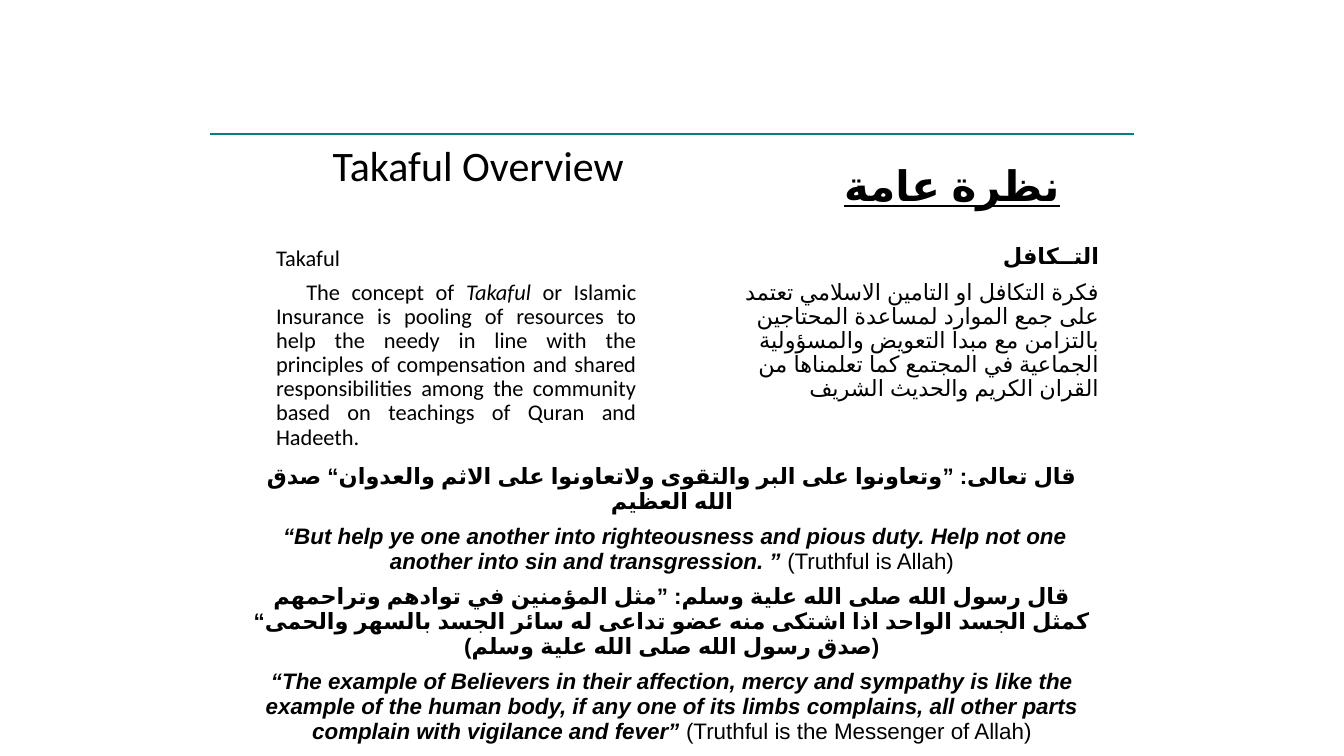
from dataclasses import dataclass

from lxml import etree
from pptx import Presentation
from pptx.dml.color import RGBColor
from pptx.enum import lang, shapes, text
from pptx.oxml.ns import qn
from pptx.text.text import TextFrame
from pptx.util import Inches, Pt

COLORS = {"text": "000000", "rule": "008080"}
ALIGN = text.PP_ALIGN


@dataclass(frozen=True)
class Span:
    words: str
    bold: bool = False
    italic: bool = False
    underline: bool = False


@dataclass(frozen=True)
class Para:
    spans: tuple[Span, ...]
    align: ALIGN = ALIGN.CENTER
    size: float = 16
    font: str = "Arial"
    before: float = 0
    leading: float = 1.0
    arabic: bool = False
    rtl: bool = False
    margin: float = 0
    indent: float = 0


@dataclass(frozen=True)
class Block:
    left: float
    top: float
    width: float
    height: float
    paras: tuple[Para, ...] = ()


def quote(words: str, source: str) -> tuple[Span, ...]:
    """Bold italic translation followed by its plain attribution."""
    return Span(words + " ", bold=True, italic=True), Span(source)


BLOCKS = (
    Block(2.33, 1.34, 4.83, 0.83, (
        Para((Span("Takaful Overview"),), size=30, font="Calibri"),)),
    Block(7.88, 1.53, 3.12, 0.61, (
        Para((Span("نظرة عامة", bold=True, underline=True),), size=30, arabic=True),)),
    Block(2.26, 2.4, 4.15, 2.14, (
        Para((Span("Takaful"),), ALIGN.LEFT, font="Calibri", leading=0.9, margin=0.38),
        Para((Span("The concept of "), Span("Takaful", italic=True),
              Span(" or Islamic Insurance is pooling of resources to help the needy in line "
                   "with the principles of compensation and shared responsibilities among the "
                   "community based on teachings of Quran and Hadeeth.")),
             ALIGN.JUSTIFY, font="Calibri", before=7, leading=0.9, margin=0.38, indent=0.3))),
    Block(6.92, 2.38, 4.08, 1.63, (
        Para((Span("التــكافل", bold=True),), ALIGN.RIGHT, leading=0.9, arabic=True, rtl=True),
        Para((Span("فكرة التكافل او التامين الاسلامي تعتمد على جمع الموارد لمساعدة المحتاجين "
                   "بالتزامن مع مبدا التعويض والمسؤولية الجماعية في المجتمع كما تعلمناها من "
                   "القران الكريم والحديث الشريف"),),
             ALIGN.RIGHT, before=8.5, leading=0.9, arabic=True, rtl=True))),
)

TABLES = (
    Block(2.58, 4.25, 8.42, 0.65),
    Block(2.33, 4.56, 8.67, 2.83, (
        Para((Span("قال تعالى: ”وتعاونوا على البر والتقوى ولاتعاونوا على الاثم والعدوان“ "
                   "صدق الله العظيم", bold=True),), arabic=True, rtl=True),
        Para(quote(" “But help ye one another into righteousness and pious duty. Help not one "
                   "another into sin and transgression. ”", "(Truthful is Allah)"), before=7.2),
        Para((Span("قال رسول الله صلى الله علية وسلم: ”مثل المؤمنين في توادهم وتراحمهم كمثل "
                   "الجسد الواحد اذا اشتكى منه عضو تداعى له سائر الجسد بالسهر والحمى“ "
                   "(صدق رسول الله صلى الله علية وسلم)", bold=True),), before=7.2, arabic=True),
        Para(quote("“The example of Believers in their affection, mercy and sympathy is like "
                   "the example of the human body, if any one of its limbs complains, all other "
                   "parts complain with vigilance and fever”",
                   "(Truthful is the Messenger of Allah)"), before=7.2),
    )),
)


def write(frame: TextFrame, paras: tuple[Para, ...]) -> None:
    for number, para in enumerate(paras):
        line = frame.add_paragraph() if number else frame.paragraphs[0]
        line.alignment = para.align
        line.line_spacing = para.leading
        line.space_before = Pt(para.before)
        line.font.size = Pt(para.size)
        line.font.name = para.font
        line.font.color.rgb = RGBColor.from_string(COLORS["text"])
        properties = line._p.get_or_add_pPr()
        properties.set("marL", str(Inches(para.margin)))
        properties.set("indent", str(Inches(para.indent)))
        properties.set("rtl", str(int(para.rtl)))
        for span in para.spans:
            run = line.add_run()
            run.text = span.words
            run.font.bold = span.bold
            run.font.italic = span.italic
            run.font.underline = span.underline
            if para.arabic:
                run.font.language_id = lang.MSO_LANGUAGE_ID.ARABIC
                # Arabic letters take the complex-script font
                etree.SubElement(run._r.get_or_add_rPr(), qn("a:cs"), typeface=para.font)


def place(block: Block) -> tuple[int, ...]:
    return tuple(map(Inches, (block.left, block.top, block.width, block.height)))


def add_block(slide, block: Block) -> None:
    box = slide.shapes.add_textbox(*place(block))
    box.text_frame.word_wrap = True
    write(box.text_frame, block.paras)


def add_panel(slide, block: Block) -> None:
    """Single-cell table without fill or banding."""
    table = slide.shapes.add_table(1, 1, *place(block)).table
    table.first_row = table.horz_banding = False
    cell = table.cell(0, 0)
    cell.fill.background()
    write(cell.text_frame, block.paras)


def add_rule(slide) -> None:
    rule = slide.shapes.add_connector(
        shapes.MSO_CONNECTOR.STRAIGHT, *map(Inches, (2.08, 1.33, 11.25, 1.33)))
    rule.line.color.rgb = RGBColor.from_string(COLORS["rule"])
    rule.line.width = Pt(1.5)
    etree.SubElement(rule._element.spPr, qn("a:effectLst"))


def main() -> None:
    deck = Presentation()
    deck.slide_width, deck.slide_height = Inches(13.33), Inches(7.5)
    slide = deck.slides.add_slide(deck.slide_layouts[6])
    add_rule(slide)
    for panel in TABLES:
        add_panel(slide, panel)
    for block in BLOCKS:
        add_block(slide, block)
    deck.save("out.pptx")


if __name__ == "__main__":
    main()
